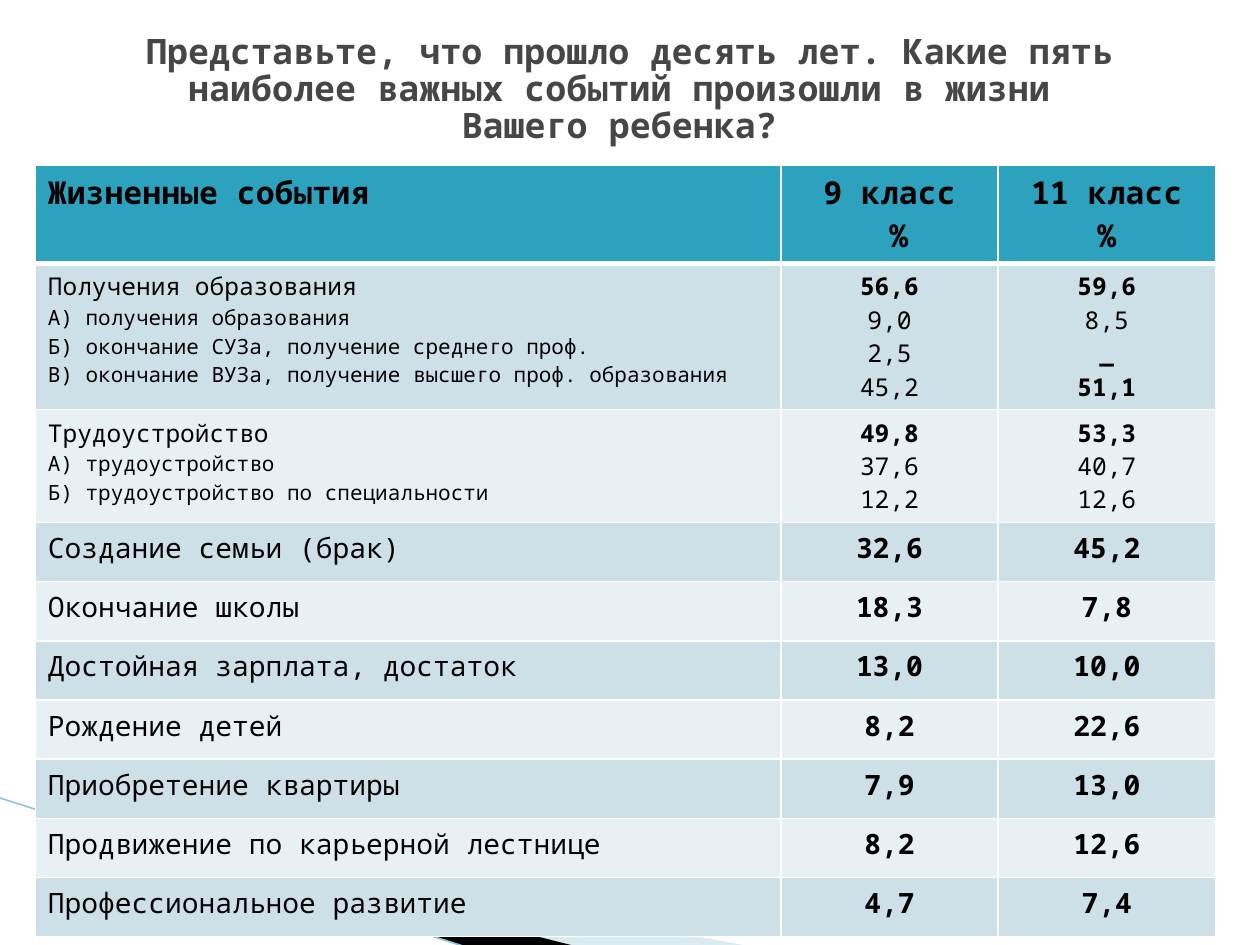
from copy import deepcopy

from lxml import etree
from pptx import Presentation
from pptx import util as u
from pptx.dml.color import RGBColor
from pptx.enum import shapes, text
from pptx.oxml import ns

FONT = "Noto Sans Mono"
HEADER, DARK_BAND, LIGHT_BAND = "2DA2BF", "CDE0E8", "E8F0F4"


def color(value):
    return RGBColor.from_string(value)


def write(para, words, size=14, bold=False, fill="000000", centered=False):
    para.text = words
    para.alignment = text.PP_ALIGN.CENTER if centered else text.PP_ALIGN.LEFT
    for span in para.runs:
        span.font.name = FONT
        span.font.size = u.Pt(size)
        span.font.bold = bold
        span.font.color.rgb = color(fill)
    # Line breaks take the format of the text around them
    for line_break in para._p.findall(ns.qn("a:br")):
        line_break.append(deepcopy(para.runs[0]._r.rPr))


deck = Presentation()
deck.slide_width, deck.slide_height = u.Inches(10), u.Inches(7.5)
page = deck.slides.add_slide(deck.slide_layouts[5])

# Corner decoration
wedges = [
    ([(0.55, 6.51), (5.95, 7.51), (4.56, 7.51), (0.55, 6.5)], "A0CBDC", 40),
    ([(0.53, 6.49), (4.57, 7.51), (3.72, 7.52), (0.54, 6.5)], "000000", 100),
]
for points, fill, opacity in wedges:
    corners = [(u.Inches(x), u.Inches(y)) for x, y in points]
    outline = page.shapes.build_freeform(*corners[0])
    outline.add_line_segments(corners[1:], close=True)
    wedge = outline.convert_to_shape()
    wedge.shadow.inherit = False
    wedge.fill.solid()
    wedge.fill.fore_color.rgb = color(fill)
    wedge.line.fill.background()
    if opacity < 100:
        tint = wedge._element.spPr.find(".//" + ns.qn("a:srgbClr"))
        etree.SubElement(tint, ns.qn("a:alpha"), val=str(opacity * 1000))

edge = page.shapes.add_connector(
    shapes.MSO_CONNECTOR.STRAIGHT,
    u.Inches(-0.01), u.Inches(6.33), u.Inches(3.71), u.Inches(7.52))
edge.line.color.rgb = color("97C5D8")
edge.line.width = u.Pt(0.95)
etree.SubElement(edge._element.spPr, ns.qn("a:effectLst"))

# Title
title = page.shapes.title
title.left, title.top = u.Inches(0.5), u.Inches(0.21)
title.width, title.height = u.Inches(9), u.Inches(1.02)
frame = title.text_frame
frame.word_wrap = True
frame.auto_size = text.MSO_AUTO_SIZE.NONE
frame.vertical_anchor = text.MSO_ANCHOR.MIDDLE
write(frame.paragraphs[0],
      "Представьте, что прошло десять лет. Какие пять наиболее важных "
      "событий произошли в жизни \vВашего ребенка? ",
      size=20, bold=True, fill="464646", centered=True)
frame.paragraphs[0].line_spacing = 0.88

# Table content: row height, text size, then the lines of each column
rows = [
    (0.63, 18, ["Жизненные события"], ["9 класс", " %"], ["11 класс", "%"]),
    (0.96, 14,
     ["Получения образования", "А) получения образования",
      "Б) окончание СУЗа, получение среднего проф.",
      "В) окончание ВУЗа, получение высшего проф. образования"],
     ["56,6", "9,0", "2,5", "45,2"], ["59,6", "8,5", "_", "51,1"]),
    (0.74, 14,
     ["Трудоустройство", "А) трудоустройство",
      "Б) трудоустройство по специальности"],
     ["49,8", "37,6", "12,2"], ["53,3", "40,7", "12,6"]),
]
single_events = [
    ("Создание семьи (брак)", "32,6", "45,2"),
    ("Окончание школы", "18,3", "7,8"),
    ("Достойная зарплата, достаток", "13,0", "10,0"),
    ("Рождение детей", "8,2", "22,6"),
    ("Приобретение квартиры", "7,9", "13,0"),
    ("Продвижение по карьерной лестнице", "8,2", "12,6"),
    ("Профессиональное развитие", "4,7", "7,4"),
]
rows += [(0.47, 16, [event], [ninth], [eleventh])
         for event, ninth, eleventh in single_events]
emphasized = {"_", "51,1"}

# Table
widths = [5.92, 1.72, 1.73]
table = page.shapes.add_table(
    len(rows), len(widths), u.Inches(0.28), u.Inches(1.31),
    u.Inches(sum(widths)), u.Inches(sum(row[0] for row in rows))).table
for column, width in zip(table.columns, widths):
    column.width = u.Inches(width)

for r, (height, size, *columns) in enumerate(rows):
    table.rows[r].height = u.Inches(height)
    for c, lines in enumerate(columns):
        cell = table.cell(r, c)

        # White borders, thicker under the header
        for side in "LRTB":
            thick = (r, side) in [(0, "B"), (1, "T")]
            border = etree.SubElement(
                cell._tc.get_or_add_tcPr(), ns.qn("a:ln" + side),
                w=str(u.Pt(3 if thick else 1)))
            paint = etree.SubElement(border, ns.qn("a:solidFill"))
            etree.SubElement(paint, ns.qn("a:srgbClr"), val="FFFFFF")

        cell.fill.solid()
        band = DARK_BAND if r % 2 else LIGHT_BAND
        cell.fill.fore_color.rgb = color(band if r else HEADER)

        for i, line in enumerate(lines):
            frame = cell.text_frame
            para = frame.add_paragraph() if i else frame.paragraphs[0]
            leading = c > 0 and i == 0
            write(para, line,
                  size=12 if c == 0 and i else size,
                  bold=r == 0 or leading or line in emphasized,
                  centered=c > 0)

deck.save("out.pptx")
